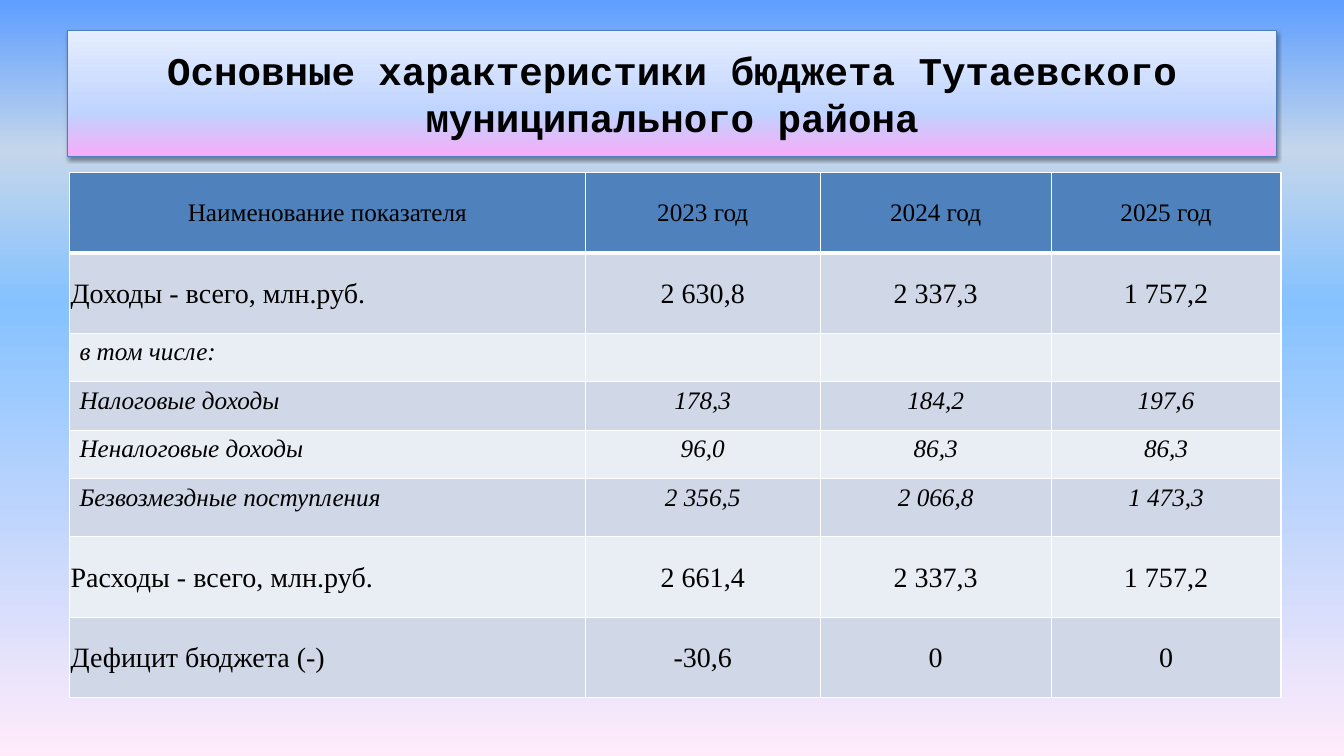
from lxml.etree import SubElement
from pptx import Presentation
from pptx.dml.color import RGBColor
from pptx.enum.shapes import MSO_SHAPE
from pptx.enum.text import MSO_ANCHOR, PP_ALIGN
from pptx.oxml.ns import qn
from pptx.util import Cm, Pt

BLACK = RGBColor(0x00, 0x00, 0x00)
WHITE = RGBColor(0xFF, 0xFF, 0xFF)
HEADER_BLUE = RGBColor(0x4F, 0x81, 0xBD)
BAND_DARK = RGBColor(0xD0, 0xD8, 0xE8)
BAND_LIGHT = RGBColor(0xE9, 0xED, 0xF4)
BANNER_LINE = RGBColor(0x4B, 0x7E, 0xBC)

# Gradient stops from top to bottom: percent, colour
SKY = [(0, RGBColor(0x5E, 0x9E, 0xFF)), (20, RGBColor(0xC4, 0xD6, 0xEB)),
       (40, RGBColor(0x85, 0xC2, 0xFF)), (100, RGBColor(0xFF, 0xEB, 0xFA))]
BANNER = [(0, RGBColor(0xE6, 0xEE, 0xFF)), (65, RGBColor(0xBF, 0xD4, 0xFF)),
          (100, RGBColor(0xF6, 0xAC, 0xF8))]

TITLE = "Основные характеристики бюджета Тутаевского муниципального района"
HEADER, TOTAL, DETAIL = "header", "total", "detail"
BUDGET = [
    (HEADER, 2.03, ["Наименование показателя", "2023 год", "2024 год", "2025 год"]),
    (TOTAL, 2.03, ["Доходы - всего, млн.руб.", "2 630,8", "2 337,3", "1 757,2"]),
    (DETAIL, 1.22, ["в том числе:", "", "", ""]),
    (DETAIL, 1.22, ["Налоговые доходы", "178,3", "184,2", "197,6"]),
    (DETAIL, 1.22, ["Неналоговые доходы", "96,0", "86,3", "86,3"]),
    (DETAIL, 1.47, ["Безвозмездные поступления", "2 356,5", "2 066,8", "1 473,3"]),
    (TOTAL, 2.03, ["Расходы - всего, млн.руб.", "2 661,4", "2 337,3", "1 757,2"]),
    (TOTAL, 2.03, ["Дефицит бюджета (-)", "-30,6", "0", "0"]),
]
COLUMN_WIDTHS = [13, 5.92, 5.82, 5.79]


def add_color(parent, color):
    return SubElement(parent, qn("a:srgbClr"), val=str(color))


def fill_downwards(fill, element, stops):
    """Give the fill inside element a vertical gradient."""
    fill.gradient()
    gradient = element.find(".//" + qn("a:gradFill"))
    stop_list = gradient.find(qn("a:gsLst"))
    for stop in list(stop_list):
        stop_list.remove(stop)
    for percent, color in stops:
        add_color(SubElement(stop_list, qn("a:gs"), pos=str(percent * 1000)), color)
    gradient.find(qn("a:lin")).set("ang", "5400000")


def format_text(paragraph, font_name, size, align, bold=False, italic=False):
    paragraph.alignment = align
    for run in paragraph.runs:
        font = run.font
        font.name, font.size = font_name, Pt(size)
        font.bold, font.italic = bold, italic
        font.color.rgb = BLACK


def add_banner(slide):
    banner = slide.shapes.add_shape(MSO_SHAPE.RECTANGLE, Cm(1.7), Cm(0.76), Cm(30.48), Cm(3.18))
    fill_downwards(banner.fill, banner.element, BANNER)
    banner.line.color.rgb = BANNER_LINE
    banner.line.width = Pt(0.75)

    # Soft shadow below the banner
    banner.shadow.inherit = False
    effects = banner.element.spPr.find(qn("a:effectLst"))
    shadow = SubElement(effects, qn("a:outerShdw"), blurRad=str(Pt(3.1)), dist=str(Pt(1.6)),
                        dir="5400000", rotWithShape="0")
    SubElement(add_color(shadow, BLACK), qn("a:alpha"), val="38000")

    frame = banner.text_frame
    frame.text = TITLE
    frame.word_wrap = True
    frame.vertical_anchor = MSO_ANCHOR.MIDDLE
    format_text(frame.paragraphs[0], "Courier New", 28, PP_ALIGN.CENTER, bold=True)


def set_borders(cell, bottom):
    properties = cell._tc.get_or_add_tcPr()
    for side, width in (("L", 1), ("R", 1), ("T", 1), ("B", bottom)):
        border = SubElement(properties, qn("a:ln" + side), w=str(Pt(width)))
        add_color(SubElement(border, qn("a:solidFill")), WHITE)


def fill_cell(cell, text, kind, align, color):
    cell.text = text
    set_borders(cell, bottom=3 if kind == HEADER else 1)
    cell.fill.solid()
    cell.fill.fore_color.rgb = color
    if kind != DETAIL:
        cell.vertical_anchor = MSO_ANCHOR.MIDDLE
        cell.margin_left = cell.margin_right = cell.margin_top = Cm(0.03)
        cell.margin_bottom = 0
    format_text(cell.text_frame.paragraphs[0], "Times New Roman",
                20 if kind == TOTAL else 18, align, italic=kind == DETAIL)


def add_budget_table(slide):
    heights = [height for _, height, _ in BUDGET]
    table = slide.shapes.add_table(len(BUDGET), len(COLUMN_WIDTHS), Cm(1.75), Cm(4.34),
                                   Cm(sum(COLUMN_WIDTHS)), Cm(sum(heights))).table
    for column, width in zip(table.columns, COLUMN_WIDTHS):
        column.width = Cm(width)
    for r, (kind, height, texts) in enumerate(BUDGET):
        table.rows[r].height = Cm(height)
        band = BAND_DARK if r % 2 else BAND_LIGHT
        color = HEADER_BLUE if kind == HEADER else band
        for c, text in enumerate(texts):
            is_label = c == 0 and kind != HEADER
            align = PP_ALIGN.LEFT if is_label else PP_ALIGN.CENTER
            fill_cell(table.cell(r, c), text, kind, align, color)


def main():
    presentation = Presentation()
    presentation.slide_width, presentation.slide_height = Cm(33.87), Cm(19.05)
    slide = presentation.slides.add_slide(presentation.slide_layouts[6])
    fill_downwards(slide.background.fill, slide.element, SKY)
    add_banner(slide)
    add_budget_table(slide)
    presentation.save("out.pptx")


if __name__ == "__main__":
    main()
